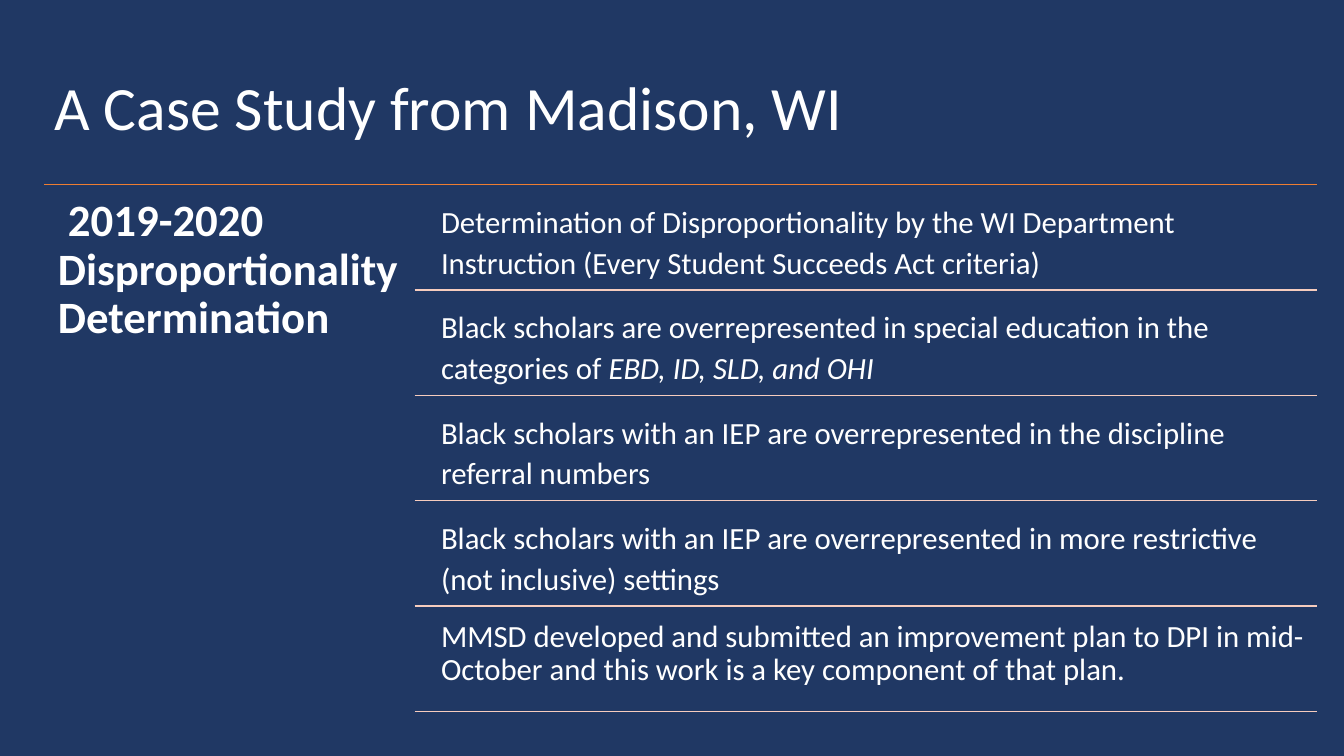
from lxml import etree
from pptx import Presentation
from pptx.dml.color import RGBColor
from pptx.enum.shapes import MSO_CONNECTOR
from pptx.enum.text import MSO_ANCHOR, MSO_AUTO_SIZE, PP_ALIGN
from pptx.oxml.ns import qn
from pptx.util import Pt

STRAIGHT = MSO_CONNECTOR.STRAIGHT
TOP, MIDDLE = MSO_ANCHOR.TOP, MSO_ANCHOR.MIDDLE
LEFT = PP_ALIGN.LEFT
NO_AUTOFIT = MSO_AUTO_SIZE.NONE

FONT = "Calibri"
NAVY, WHITE, ORANGE, PEACH = "203864", "FFFFFF", "ED7D31", "F6CCBE"

TITLE = "A Case Study from Madison, WI"
HEADING = " 2019-2020 Disproportionality Determination"
# Each finding: plain text, italic ending, line spacing
FINDINGS = [
    ("Determination of Disproportionality by the WI Department Instruction "
     "(Every Student Succeeds Act criteria)", "", 1.1),
    ("Black scholars are overrepresented in special education in the categories of ",
     "EBD, ID, SLD, and OHI", 1.1),
    ("Black scholars with an IEP are overrepresented in the discipline referral numbers",
     "", 1.1),
    ("Black scholars with an IEP are overrepresented in more restrictive "
     "(not inclusive) settings", "", 1.1),
    ("MMSD developed and submitted an improvement plan to DPI in mid-October and "
     "this work is a key component of that plan.", "", 0.9),
]

MARGIN = 31.7
RIGHT = 941
LIST_TOP = 131.8
ROW_PITCH = 75.3
ROW_GAP = 3.7
ROW_HEIGHT = 71.6
RULE_LEFT = 296.2
FINDING_LEFT = 308.4


def color(hex_value):
    return RGBColor.from_string(hex_value)


def place(shape, left, top, width, height):
    shape.left, shape.top = Pt(left), Pt(top)
    shape.width, shape.height = Pt(width), Pt(height)


def format_text(shape, size, spacing, inset, anchor, bold=False):
    frame = shape.text_frame
    frame.word_wrap = True
    frame.auto_size = NO_AUTOFIT
    frame.vertical_anchor = anchor
    frame.margin_left = frame.margin_right = Pt(inset[0])
    frame.margin_top = frame.margin_bottom = Pt(inset[1])
    paragraph = frame.paragraphs[0]
    paragraph.alignment = LEFT
    paragraph.line_spacing = spacing
    for run in paragraph.runs:
        run.font.name = FONT
        run.font.size = Pt(size)
        run.font.bold = bold
        run.font.color.rgb = color(WHITE)


def add_rule(slide, left, y, line_color):
    rule = slide.shapes.add_connector(STRAIGHT, Pt(left), Pt(y), Pt(RIGHT), Pt(y))
    rule.line.color.rgb = color(line_color)
    rule.line.width = Pt(1)
    etree.SubElement(rule._element.spPr, qn("a:effectLst"))


def add_text(slide, text, left, top, width, height):
    box = slide.shapes.add_textbox(Pt(left), Pt(top), Pt(width), Pt(height))
    box.text_frame.text = text
    return box


def main():
    deck = Presentation()
    deck.slide_width, deck.slide_height = Pt(960), Pt(540)
    slide = deck.slides.add_slide(deck.slide_layouts[5])
    background = slide.background.fill
    background.solid()
    background.fore_color.rgb = color(NAVY)

    title = slide.shapes.title
    title.text_frame.text = TITLE
    place(title, MARGIN, 26.6, 828, 104.4)
    format_text(title, 44, 0.9, (7.2, 3.6), MIDDLE)

    add_rule(slide, MARGIN, LIST_TOP, ORANGE)
    heading = add_text(slide, HEADING, MARGIN, LIST_TOP, 265, 380)
    format_text(heading, 32, 0.9, (9.6, 9.6), TOP, bold=True)

    for row, (plain, italic, spacing) in enumerate(FINDINGS):
        row_top = LIST_TOP + row * ROW_PITCH
        finding = add_text(slide, plain, FINDING_LEFT, row_top + ROW_GAP,
                           RIGHT - FINDING_LEFT, ROW_HEIGHT)
        if italic:
            ending = finding.text_frame.paragraphs[0].add_run()
            ending.text = italic
            ending.font.italic = True
        format_text(finding, 22, spacing, (6.6, 6.6), TOP)
        add_rule(slide, RULE_LEFT, row_top + ROW_PITCH, PEACH)

    deck.save("out.pptx")


if __name__ == "__main__":
    main()
